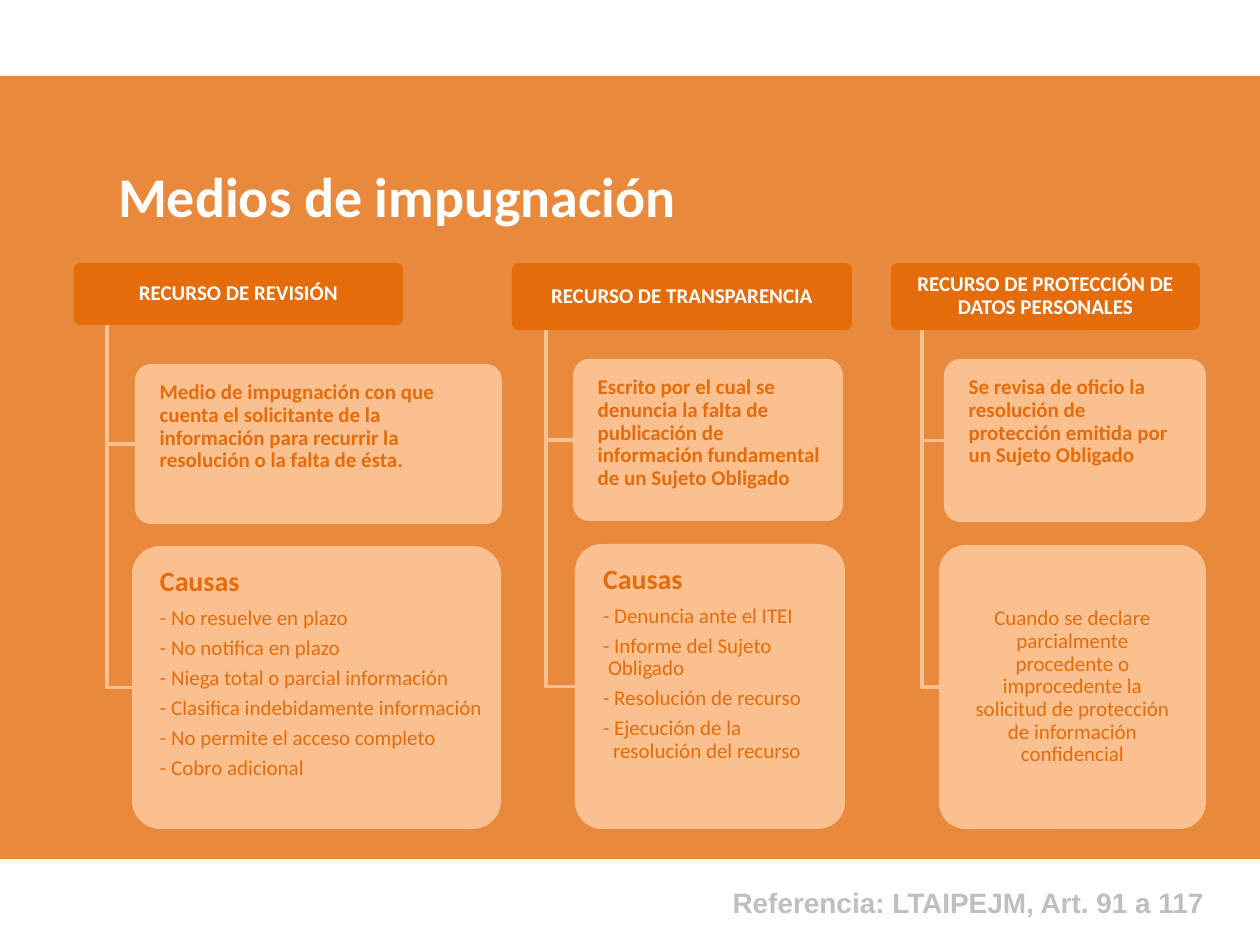
from dataclasses import dataclass
from typing import Optional

from lxml.etree import SubElement
from pptx import Presentation
from pptx.dml.color import RGBColor
from pptx.enum.shapes import MSO_SHAPE
from pptx.enum.text import MSO_ANCHOR, MSO_AUTO_SIZE, PP_ALIGN
from pptx.oxml.ns import qn
from pptx.util import Pt

ORANGE = RGBColor(0xE4, 0x6C, 0x0A)
PEACH = RGBColor(0xFA, 0xC0, 0x90)
WHITE = RGBColor(0xFF, 0xFF, 0xFF)
GREY = RGBColor(0xBF, 0xBF, 0xBF)
CORNER = 0.1


def px(n: float) -> int:
    """Turn pixels (126 to the inch) into EMU."""
    return round(n * 914400 / 126)


@dataclass
class Box:
    x: int
    y: int
    w: int
    h: int

    @property
    def emu(self) -> list[int]:
        return [px(n) for n in (self.x, self.y, self.w, self.h)]

    @property
    def mid(self) -> float:
        return self.y + self.h / 2

    @property
    def inner(self) -> "Box":
        """The part that clears the rounded corners."""
        d = round(0.293 * CORNER * min(self.w, self.h))
        return Box(self.x + d, self.y + d, self.w - 2 * d, self.h - 2 * d)


@dataclass
class Para:
    lines: list[str]
    size: int = 12
    bold: bool = False
    color: RGBColor = ORANGE
    align: PP_ALIGN = PP_ALIGN.LEFT
    hang: int = 0
    font: str = "Calibri"
    tight: bool = True


@dataclass
class Column:
    head: Box
    name: str
    card: Box
    about: str
    pad: int
    cause: Box
    items: list[Para]
    slot: Optional[int] = None
    edge: int = 20


def write(shape, paras: list[Para], pads=(13, 6, 13, 6), anchor=MSO_ANCHOR.TOP) -> None:
    frame = shape.text_frame
    frame.word_wrap = True
    frame.auto_size = MSO_AUTO_SIZE.NONE
    frame.vertical_anchor = anchor
    (frame.margin_left, frame.margin_top,
     frame.margin_right, frame.margin_bottom) = [px(n) for n in pads]
    for i, item in enumerate(paras):
        para = frame.paragraphs[0] if i == 0 else frame.add_paragraph()
        para.alignment = item.align
        para.space_before = Pt(0)
        if item.tight:
            para.line_spacing = 0.9
            para.space_after = Pt(0.35 * item.size)
        # Plain paragraph, with a hanging indent where asked
        props = para._p.get_or_add_pPr()
        props.set("marL", str(px(item.hang)))
        props.set("indent", str(-px(item.hang)))
        SubElement(props, qn("a:buNone"))
        for n, line in enumerate(item.lines):
            if n:
                para.add_line_break()
            run = para.add_run()
            run.text = line
            run.font.name = item.font
            run.font.size = Pt(item.size)
            run.font.bold = item.bold
            run.font.color.rgb = item.color


def draw(shapes, box: Box, color: RGBColor, kind=MSO_SHAPE.ROUNDED_RECTANGLE):
    shape = shapes.add_shape(kind, *box.emu)
    shape.shadow.inherit = False
    shape.fill.solid()
    shape.fill.fore_color.rgb = color
    shape.line.fill.background()
    if kind == MSO_SHAPE.ROUNDED_RECTANGLE:
        shape.adjustments[0] = CORNER
    return shape


def elbow(shapes, head: Box, goal: Box) -> None:
    stem = head.x + head.w / 10
    path = shapes.build_freeform(px(stem), px(head.y + head.h))
    path.add_line_segments([(px(stem), px(goal.mid)), (px(goal.x), px(goal.mid))], close=False)
    line = path.convert_to_shape()
    line.shadow.inherit = False
    line.fill.background()
    line.line.color.rgb = PEACH
    line.line.width = Pt(2)


def place(slide, slot: int, box: Box):
    """Move a placeholder to its box, in front of what is drawn so far."""
    holder = slide.placeholders[slot]
    holder.left, holder.top, holder.width, holder.height = box.emu
    slide.shapes._spTree.append(holder._element)
    return holder


def column(slide, col: Column) -> None:
    shapes = slide.shapes
    head = draw(shapes, col.head, ORANGE)
    write(head, [Para([col.name], bold=True, color=WHITE, align=PP_ALIGN.CENTER)],
          (4, 3, 4, 3), MSO_ANCHOR.MIDDLE)
    elbow(shapes, col.head, col.card)
    card = draw(shapes, col.card, PEACH)
    write(card, [Para([col.about], bold=True)], (20, 13, col.pad, 13))
    elbow(shapes, col.head, col.cause)
    cause = draw(shapes, col.cause, PEACH)
    anchor = MSO_ANCHOR.MIDDLE
    if col.slot is not None:
        cause = place(slide, col.slot, col.cause.inner)
        anchor = MSO_ANCHOR.TOP
    write(cause, col.items, (20, 13, col.edge, 13), anchor)


TITLE = Para(["Causas"], 16, True)
COLUMNS = [
    Column(Box(74, 263, 329, 62), "RECURSO DE REVISIÓN", Box(135, 364, 367, 160),
           "Medio de impugnación con que cuenta el solicitante de la información "
           "para recurrir la resolución o la falta de ésta.", 20,
           Box(132, 546, 369, 283),
           [TITLE] + [Para([text]) for text in (
               "- No resuelve en plazo", "- No notifica en plazo",
               "- Niega total o parcial información",
               "- Clasifica indebidamente información",
               "- No permite el acceso completo", "- Cobro adicional")],
           slot=1, edge=10),
    Column(Box(512, 263, 340, 67), "RECURSO DE TRANSPARENCIA", Box(573, 359, 270, 162),
           "Escrito por el cual se denuncia la falta de publicación de información "
           "fundamental de un Sujeto Obligado", 10,
           Box(575, 544, 270, 285),
           [TITLE, Para(["- Denuncia ante el ITEI"]),
            Para(["- Informe del Sujeto", "Obligado"], hang=5),
            Para(["- Resolución de recurso"]),
            Para(["- Ejecución de la", "resolución del recurso"], hang=10)],
           slot=2),
    Column(Box(891, 263, 309, 67), "RECURSO DE PROTECCIÓN DE DATOS PERSONALES",
           Box(944, 359, 262, 163),
           "Se revisa de oficio la resolución de protección emitida por un Sujeto Obligado", 20,
           Box(939, 545, 267, 284),
           [Para(["Cuando se declare parcialmente procedente o improcedente la "
                  "solicitud de protección de información confidencial"],
                 align=PP_ALIGN.CENTER)]),
]


def main() -> None:
    deck = Presentation()
    deck.slide_width, deck.slide_height = px(1260), px(945)
    slide = deck.slides.add_slide(deck.slide_layouts[3])

    # Orange band, 80 % opaque
    band = draw(slide.shapes, Box(0, 76, 1260, 783), ORANGE, MSO_SHAPE.RECTANGLE)
    tint = band._element.spPr.find(qn("a:solidFill"))[0]
    SubElement(tint, qn("a:alpha"), val="80000")

    # Reference and title
    note = slide.shapes.add_textbox(*Box(714, 879, 503, 47).emu)
    write(note, [Para(["Referencia: LTAIPEJM, Art. 91 a 117"], 16, True, GREY,
                      PP_ALIGN.RIGHT, font="Arial", tight=False)])
    title = place(slide, 0, Box(105, 155, 1052, 81))
    write(title, [Para(["Medios de impugnación"], 32, True, WHITE, tight=False)])

    # The three remedies
    for col in COLUMNS:
        column(slide, col)
    deck.save("out.pptx")


if __name__ == "__main__":
    main()
